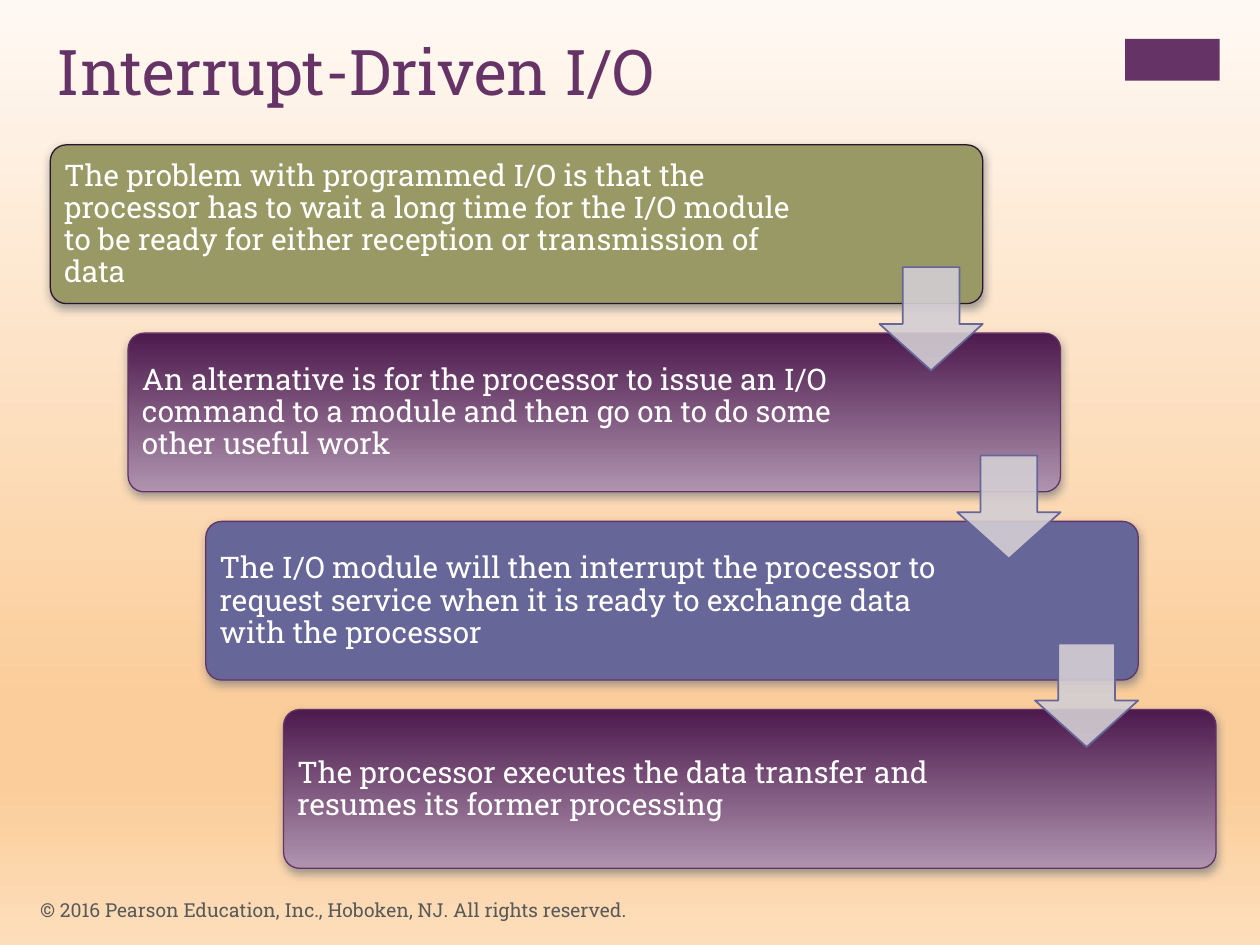
from lxml import etree
from pptx import Presentation
from pptx import util as u
from pptx.dml.color import RGBColor
from pptx.enum import shapes, text
from pptx.oxml.ns import qn

HUES = {
    "plum": "663366", "dark": "4D1A4D", "pale": "AF94AF", "olive": "999966",
    "blue": "666699", "ink": "2B142D", "mist": "D3CED3", "white": "FFFFFF",
    "gray": "595959", "shade": "808080", "cream": "FFF9F4", "peach": "FBCD9A",
    "sand": "FDDEBB",
}
FADE = [(0, "dark"), (100, "pale")]
SKY = [(0, "cream"), (74, "peach"), (83, "peach"), (100, "sand")]
STEPS = [
    ("The problem with programmed I/O is that the processor has to wait a long time "
     "for the I/O module to be ready for either reception or transmission of data",
     "olive", "ink"),
    ("An alternative is for the processor to issue an I/O command to a module and "
     "then go on to do some other useful work", FADE, "plum"),
    ("The I/O module will then interrupt the processor to request service when it is "
     "ready to exchange data with the processor", "blue", "plum"),
    ("The processor executes the data transfer and resumes its former processing",
     FADE, "plum"),
]
COLS, ROWS = 100, 75


class Deck:
    font = "Roboto Slab"

    def __init__(self):
        self.prs = Presentation()
        self.prs.slide_width = u.Inches(10)
        self.prs.slide_height = u.Inches(7.5)
        self.slide = self.prs.slides.add_slide(self.prs.slide_layouts[5])

    def area(self, x, y, w, h):
        col = self.prs.slide_width / COLS
        row = self.prs.slide_height / ROWS
        return [round(n) for n in (x * col, y * row, w * col, h * row)]

    def color(self, name):
        return RGBColor.from_string(HUES[name])

    def tint(self, parent, name, alpha=None):
        node = etree.SubElement(parent, qn("a:srgbClr"), val=HUES[name])
        if alpha:
            etree.SubElement(node, qn("a:alpha"), val=str(alpha * 1000))

    def blend(self, fill, root, stops):
        fill.gradient()
        grad = root.find(".//" + qn("a:gradFill"))
        marks = grad.find(qn("a:gsLst"))
        for old in list(marks):
            marks.remove(old)
        for pos, name in stops:
            self.tint(etree.SubElement(marks, qn("a:gs"), pos=str(pos * 1000)), name)
        grad.find(qn("a:lin")).set("ang", str(90 * 60000))

    def back(self, stops):
        self.blend(self.slide.background.fill, self.slide.element, stops)

    def words(self, box, words, size, hue, anchor, inset=None):
        frame = box.text_frame
        frame.text = words
        frame.word_wrap = True
        frame.auto_size = text.MSO_AUTO_SIZE.NONE
        frame.vertical_anchor = anchor
        if inset:
            frame.margin_left = frame.margin_right = u.Inches(inset)
            frame.margin_top = frame.margin_bottom = u.Inches(inset)
        para = frame.paragraphs[0]
        para.alignment = text.PP_ALIGN.LEFT
        font = para.runs[0].font
        font.name, font.size = self.font, u.Pt(size)
        font.color.rgb = self.color(hue)
        return para

    def title(self, words, *spot):
        box = self.slide.shapes.title
        box.left, box.top, box.width, box.height = self.area(*spot)
        self.words(box, words, 36, "plum", text.MSO_ANCHOR.TOP)

    def label(self, words, size, hue, *spot, inset=None):
        box = self.slide.shapes.add_textbox(*self.area(*spot))
        return self.words(box, words, size, hue, text.MSO_ANCHOR.MIDDLE, inset)

    def shape(self, kind, fill, *spot, line=None, width=1, adj=()):
        item = self.slide.shapes.add_shape(kind, *self.area(*spot))
        item.shadow.inherit = False
        for i, share in enumerate(adj):
            item.adjustments[i] = share
        if isinstance(fill, list):
            self.blend(item.fill, item.element, fill)
        else:
            item.fill.solid()
            item.fill.fore_color.rgb = self.color(fill)
        if line:
            item.line.color.rgb = self.color(line)
            item.line.width = u.Pt(width)
        else:
            item.line.fill.background()
        return item

    def panel(self, words, fill, line, x, y):
        item = self.shape(shapes.MSO_SHAPE.ROUNDED_RECTANGLE, fill, x, y, 74, 12.6,
                          line=line, width=0.75, adj=[0.1])
        glow = etree.SubElement(
            item.element.spPr.find(qn("a:effectLst")), qn("a:outerShdw"),
            blurRad=str(u.Pt(5)), dist=str(u.Pt(2)), dir=str(90 * 60000), rotWithShape="0")
        self.tint(glow, "shade", 75)
        para = self.label(words, 17, "white", x + 0.4, y + 0.4, 59.3, 11.9, inset=0.07)
        para.line_spacing = 0.9

    def arrow(self, x, y):
        item = self.shape(shapes.MSO_SHAPE.DOWN_ARROW, "mist", x, y, 8.2, 8.2,
                          line="blue", adj=[0.55, 0.45])
        tone = item.element.spPr.find(qn("a:solidFill")).find(qn("a:srgbClr"))
        etree.SubElement(tone, qn("a:alpha"), val="90000")

    def save(self):
        self.prs.save("out.pptx")


def main():
    deck = Deck()
    deck.back(SKY)
    deck.shape(shapes.MSO_SHAPE.RECTANGLE, "plum", 89.3, 3.1, 7.5, 3.3)
    deck.title("Interrupt-Driven I/O", 3.5, 2.1, 82.6, 12.2)
    spots = [(4 + 6.17 * i, 11.5 + 14.94 * i) for i in range(len(STEPS))]
    for step, spot in zip(STEPS, spots):
        deck.panel(*step, *spot)
    for x, y in spots[:-1]:
        deck.arrow(x + 65.8, y + 9.7)
    deck.label("© 2016 Pearson Education, Inc., Hoboken, NJ. All rights reserved.",
               11, "gray", 2.2, 70.2, 67, 4)
    deck.save()


if __name__ == "__main__":
    main()
